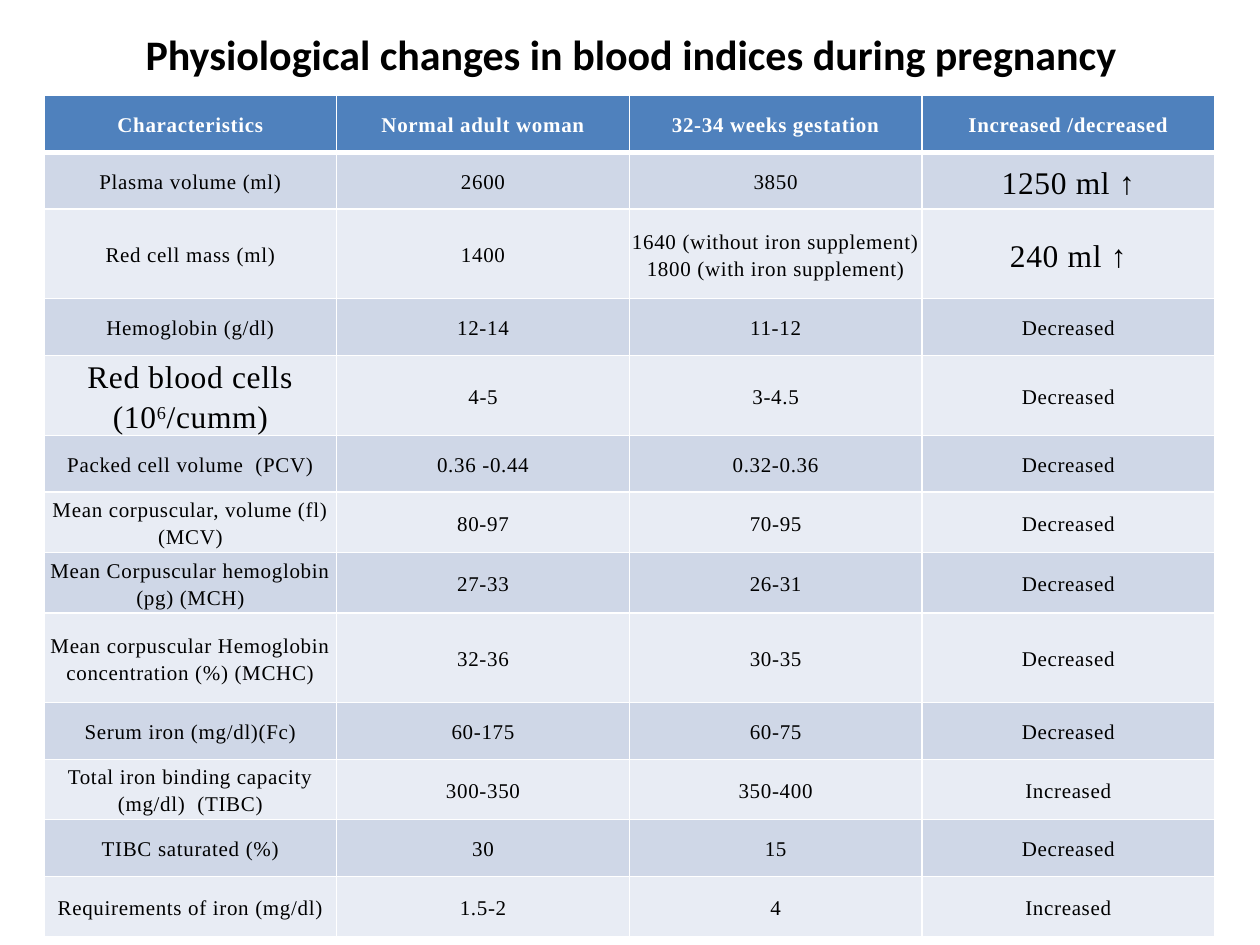
from dataclasses import dataclass

from lxml import etree
from pptx import Presentation
from pptx.dml.color import RGBColor
from pptx.enum.text import MSO_ANCHOR, PP_ALIGN
from pptx.oxml.ns import qn
from pptx.util import Inches, Pt

CENTER = PP_ALIGN.CENTER
MIDDLE = MSO_ANCHOR.MIDDLE
TITLE_ONLY = 5


@dataclass(frozen=True)
class Theme:
    title_font: str = "Calibri"
    body_font: str = "Times New Roman"
    symbol_font: str = "Arial"
    title_size: int = 24
    body_size: int = 12
    large_size: int = 18
    black: str = "000000"
    white: str = "FFFFFF"
    header: str = "4F81BD"
    bands: tuple = ("CFD7E7", "E8ECF4")
    thin: int = 1
    thick: int = 3


THEME = Theme()
TITLE = "Physiological changes in blood indices during pregnancy"

LARGE = {"size": THEME.large_size}
ARROW = {"size": THEME.large_size, "font": THEME.symbol_font}
SUPERSCRIPT = {"size": THEME.large_size, "baseline": 30000}

# A cell is plain text, or a list of (text, style) runs
ROWS = [
    ("Characteristics", "Normal adult woman", "32-34 weeks gestation", "Increased /decreased"),
    ("Plasma volume (ml)", "2600", "3850", [("1250 ml ", LARGE), ("↑", ARROW)]),
    ("Red cell mass (ml)", "1400",
     "1640 (without iron supplement) 1800 (with iron supplement)",
     [("240 ml ", LARGE), ("↑", ARROW)]),
    ("Hemoglobin (g/dl)", "12-14", "11-12", "Decreased"),
    ([("Red blood cells (10", LARGE), ("6", SUPERSCRIPT), ("/cumm)", LARGE)],
     "4-5", "3-4.5", "Decreased"),
    ("Packed cell volume  (PCV)", "0.36 -0.44", "0.32-0.36", "Decreased"),
    ("Mean corpuscular, volume (fl) (MCV)", "80-97", "70-95", "Decreased"),
    ("Mean Corpuscular hemoglobin (pg) (MCH)", "27-33", "26-31", "Decreased"),
    ("Mean corpuscular Hemoglobin concentration (%) (MCHC)", "32-36", "30-35", "Decreased"),
    ("Serum iron (mg/dl)(Fc)", "60-175", "60-75", "Decreased"),
    ("Total iron binding capacity (mg/dl)  (TIBC)", "300-350", "350-400", "Increased"),
    ("TIBC saturated (%)", "30", "15", "Decreased"),
    ("Requirements of iron (mg/dl)", "1.5-2", "4", "Increased"),
]
ROW_HEIGHT = 0.45
TALL_ROWS = {2: 0.71, 6: 0.48, 7: 0.48, 8: 0.71, 10: 0.48, 12: 0.48}


def add_run(p, text, font, size, color, bold=False):
    r = p.add_run()
    r.text = text
    r.font.name = font
    r.font.size = Pt(size)
    r.font.bold = bold
    r.font.color.rgb = RGBColor.from_string(color)
    return r


def add_title(slide):
    sp = slide.shapes.title
    sp.left, sp.top, sp.width, sp.height = (Inches(v) for v in (0.51, 0, 9, 0.85))
    tf = sp.text_frame
    tf.word_wrap = True
    tf.vertical_anchor = MIDDLE
    tf.margin_left = tf.margin_right = tf.margin_top = tf.margin_bottom = Inches(0.05)
    p = tf.paragraphs[0]
    p.alignment = CENTER
    add_run(p, TITLE, THEME.title_font, THEME.title_size, THEME.black, bold=True)


def set_borders(cell, top, bottom):
    tc_pr = cell._tc.get_or_add_tcPr()
    widths = {"a:lnL": THEME.thin, "a:lnR": THEME.thin, "a:lnT": top, "a:lnB": bottom}
    for tag, width in widths.items():
        ln = etree.SubElement(tc_pr, qn(tag), w=str(Pt(width)))
        fill = etree.SubElement(ln, qn("a:solidFill"))
        etree.SubElement(fill, qn("a:srgbClr"), val=THEME.white)


def fill_cell(cell, content, row):
    is_header = row == 0
    # Thick rule between the header and the first data row
    set_borders(cell,
                top=THEME.thick if row == 1 else THEME.thin,
                bottom=THEME.thick if is_header else THEME.thin)
    cell.fill.solid()
    band = THEME.header if is_header else THEME.bands[(row - 1) % 2]
    cell.fill.fore_color.rgb = RGBColor.from_string(band)
    cell.margin_left = cell.margin_right = cell.margin_top = cell.margin_bottom = 0
    cell.vertical_anchor = MIDDLE

    p = cell.text_frame.paragraphs[0]
    p.alignment = CENTER
    p.line_spacing = 1.15
    p.space_before = Pt(3)
    runs = [(content, {})] if isinstance(content, str) else content
    for text, style in runs:
        r = add_run(p, text, style.get("font", THEME.body_font),
                    style.get("size", THEME.body_size),
                    THEME.white if is_header else THEME.black, bold=is_header)
        r_pr = r.font._element
        r_pr.set("spc", "40")
        if "baseline" in style:
            r_pr.set("baseline", str(style["baseline"]))


def add_indices_table(slide):
    heights = [TALL_ROWS.get(i, ROW_HEIGHT) for i in range(len(ROWS))]
    frame = slide.shapes.add_table(len(ROWS), len(ROWS[0]), Inches(0.35), Inches(0.76),
                                   Inches(9.29), Inches(sum(heights)))
    table = frame.table
    table.horz_banding = False
    for i, (height, values) in enumerate(zip(heights, ROWS)):
        table.rows[i].height = Inches(height)
        for j, content in enumerate(values):
            fill_cell(table.cell(i, j), content, i)


def main():
    prs = Presentation()
    prs.slide_width, prs.slide_height = Inches(10), Inches(7.5)
    slide = prs.slides.add_slide(prs.slide_layouts[TITLE_ONLY])
    add_title(slide)
    add_indices_table(slide)
    prs.save("out.pptx")


if __name__ == "__main__":
    main()
